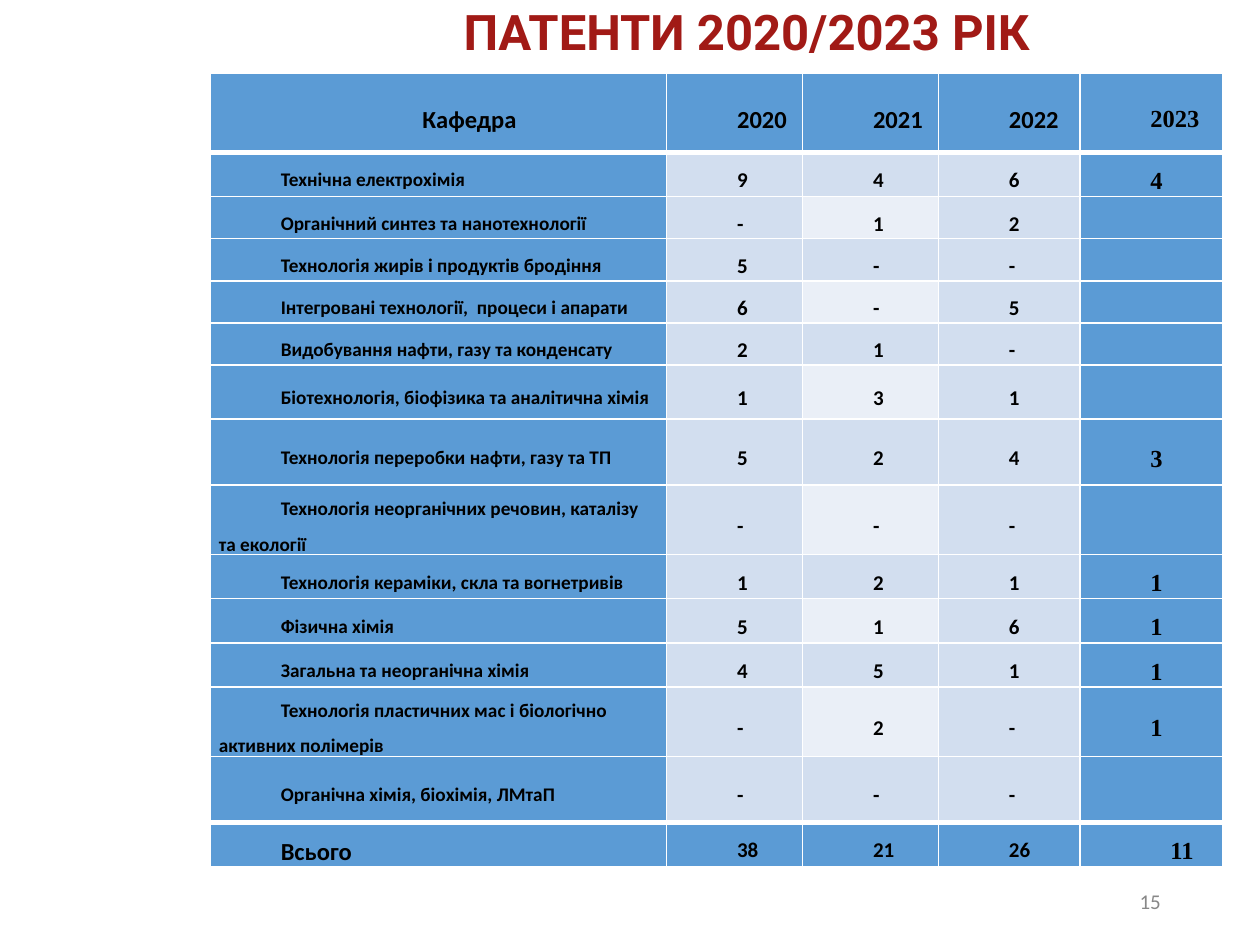
from lxml.etree import SubElement
from pptx import Presentation
from pptx.dml.color import RGBColor
from pptx.enum.text import MSO_ANCHOR, PP_ALIGN
from pptx.oxml.ns import qn
from pptx.util import Cm, Pt

# Content
TITLE = "ПАТЕНТИ 2020/2023 РІК\v"
PAGE_NUMBER = "15"
HEADER = ("Кафедра", "2020", "2021", "2022", "2023")
# Department, patents for each year, row height in cm
DEPARTMENTS = [
    ("Технічна електрохімія", "9", "4", "6", "4", 0.85),
    ("Органічний синтез та нанотехнології", "-", "1", "2", "", 0.85),
    ("Технологія жирів і продуктів бродіння", "5", "-", "-", "", 0.85),
    ("Інтегровані технології,  процеси і апарати", "6", "-", "5", "", 0.85),
    ("Видобування нафти, газу та конденсату", "2", "1", "-", "", 0.85),
    ("Біотехнологія, біофізика та аналітична хімія", "1", "3", "1", "", 1.09),
    ("Технологія переробки нафти, газу та ТП", "5", "2", "4", "3", 1.33),
    ("Технологія неорганічних речовин, каталізу та екології", "-", "-", "-", "", 1.33),
    ("Технологія кераміки, скла та вогнетривів", "1", "2", "1", "1", 0.85),
    ("Фізична хімія", "5", "1", "6", "1", 0.85),
    ("Загальна та неорганічна хімія", "4", "5", "1", "1", 0.85),
    ("Технологія пластичних мас і біологічно активних полімерів", "-", "2", "-", "1", 1.33),
    ("Органічна хімія, біохімія, ЛМтаП", "-", "-", "-", "", 1.33),
]
TOTAL = ("Всього", "38", "21", "26", "11")
ROWS = [(*HEADER, 1.6), *DEPARTMENTS, (*TOTAL, 0.85)]
COLUMN_WIDTHS = (9.2, 2.74, 2.74, 2.85, 2.87)

BLUE, BAND, LIGHT_BAND = "5B9BD5", "D2DEEF", "EAEFF7"
WHITE, BLACK, RED, GREY = "FFFFFF", "000000", "A11A16", "888888"
LAST_ROW, LAST_COLUMN = len(ROWS) - 1, len(COLUMN_WIDTHS) - 1
THICK_EDGES = {(0, "B"), (1, "T"), (LAST_ROW - 1, "B"), (LAST_ROW, "T")}


def rgb(value):
    return RGBColor.from_string(value)


def write(frame, text, size, font="Calibri", color=BLACK, bold=True,
          align=PP_ALIGN.LEFT, spacing=1.0, indent=0):
    paragraph = frame.paragraphs[0]
    paragraph.text = text
    paragraph.alignment = align
    paragraph.line_spacing = spacing
    if indent:
        properties = paragraph._p.get_or_add_pPr()
        properties.set("marL", "0")
        properties.set("indent", str(Cm(indent)))
    for run in paragraph.runs:
        run.font.size = Pt(size)
        run.font.name = font
        run.font.bold = bold
        run.font.color.rgb = rgb(color)


def add_label(left, top, width, height, text, **style):
    frame = slide.shapes.add_textbox(Cm(left), Cm(top), Cm(width), Cm(height)).text_frame
    frame.word_wrap = True
    frame.vertical_anchor = MSO_ANCHOR.MIDDLE
    write(frame, text, **style)


def add_borders(cell, row):
    properties = cell._tc.get_or_add_tcPr()
    for position, side in enumerate("LRTB"):
        width = 3 if (row, side) in THICK_EDGES else 1
        line = SubElement(properties, qn(f"a:ln{side}"), w=str(Pt(width)))
        SubElement(SubElement(line, qn("a:solidFill")), qn("a:srgbClr"), val=WHITE)
        properties.insert(position, line)


def cell_fill(row, column):
    if row in (0, LAST_ROW) or column in (0, LAST_COLUMN):
        return BLUE
    return LIGHT_BAND if column == 2 and row % 2 == 0 and row < LAST_ROW - 1 else BAND


def cell_style(row, column):
    if row == 0 or column == LAST_COLUMN or (row, column) == (LAST_ROW, 0):
        size = 14
    else:
        size = 11 if column == 0 else 12
    centred = (row, column) in ((0, 0), (LAST_ROW, LAST_COLUMN))
    return {
        "size": size,
        "font": "Times New Roman" if column == LAST_COLUMN else "Calibri",
        "align": PP_ALIGN.CENTER if centred else PP_ALIGN.LEFT,
    }


presentation = Presentation()
presentation.slide_width, presentation.slide_height = Cm(25.4), Cm(19.05)
slide = presentation.slides.add_slide(presentation.slide_layouts[6])

# Title and page number
add_label(4.47, 0.33, 21.16, 1.5, TITLE, size=28, font="Roboto", color=RED,
          align=PP_ALIGN.CENTER, spacing=0.9)
add_label(17.93, 17.65, 5.72, 1.02, PAGE_NUMBER, size=12, color=GREY, bold=False,
          align=PP_ALIGN.RIGHT)

# Patents by department
patents = slide.shapes.add_table(
    len(ROWS), len(COLUMN_WIDTHS), Cm(4.24), Cm(1.47),
    Cm(sum(COLUMN_WIDTHS)), Cm(sum(row[-1] for row in ROWS))).table
for column, width in enumerate(COLUMN_WIDTHS):
    patents.columns[column].width = Cm(width)
for row, (*values, height) in enumerate(ROWS):
    patents.rows[row].height = Cm(height)
    for column, value in enumerate(values):
        cell = patents.cell(row, column)
        cell.margin_left = cell.margin_right = Cm(0.17)
        cell.margin_top = cell.margin_bottom = 0
        cell.vertical_anchor = MSO_ANCHOR.MIDDLE
        cell.fill.solid()
        cell.fill.fore_color.rgb = rgb(cell_fill(row, column))
        add_borders(cell, row)
        if value:
            write(cell.text_frame, value, spacing=1.5, indent=1.25,
                  **cell_style(row, column))

presentation.save("out.pptx")
